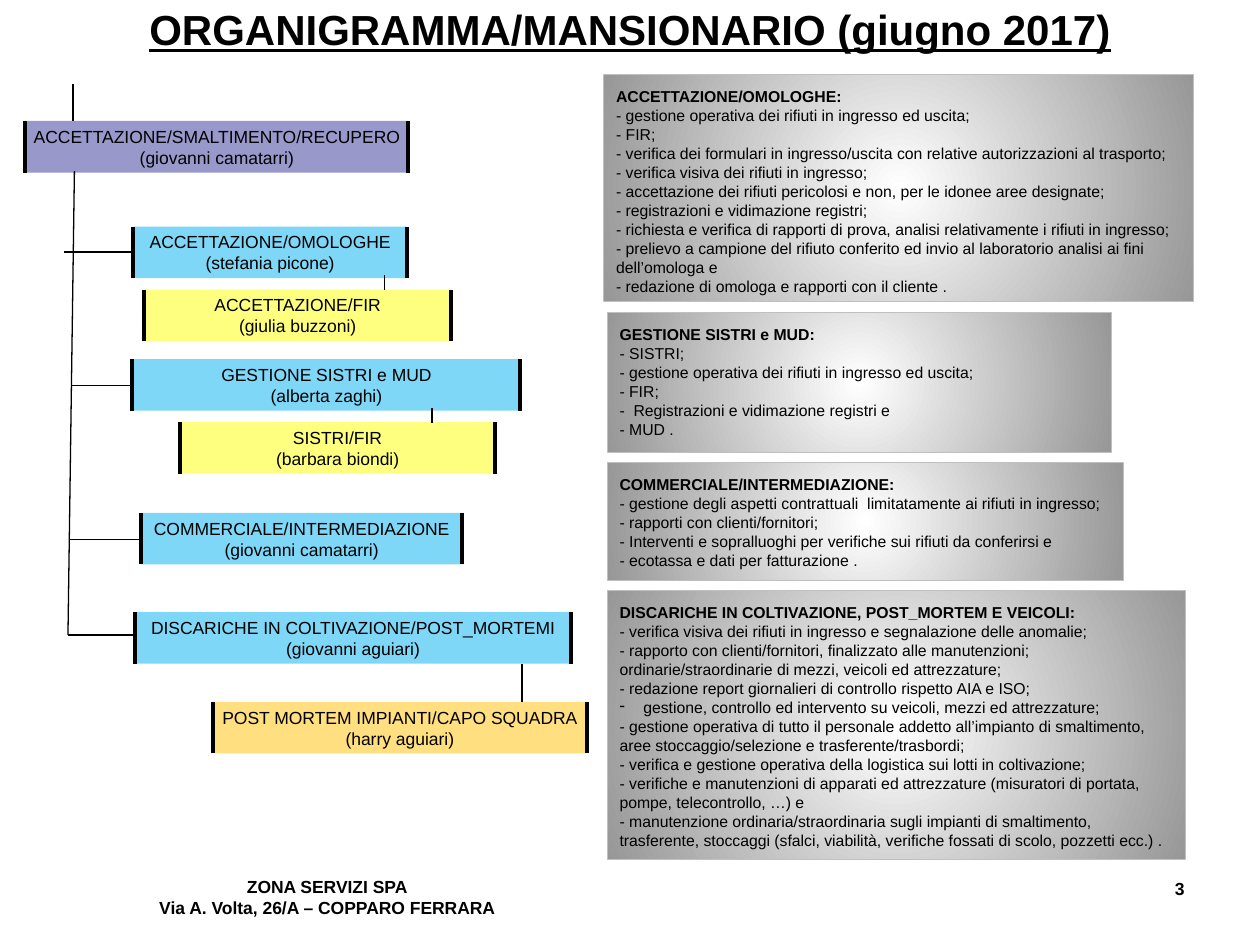
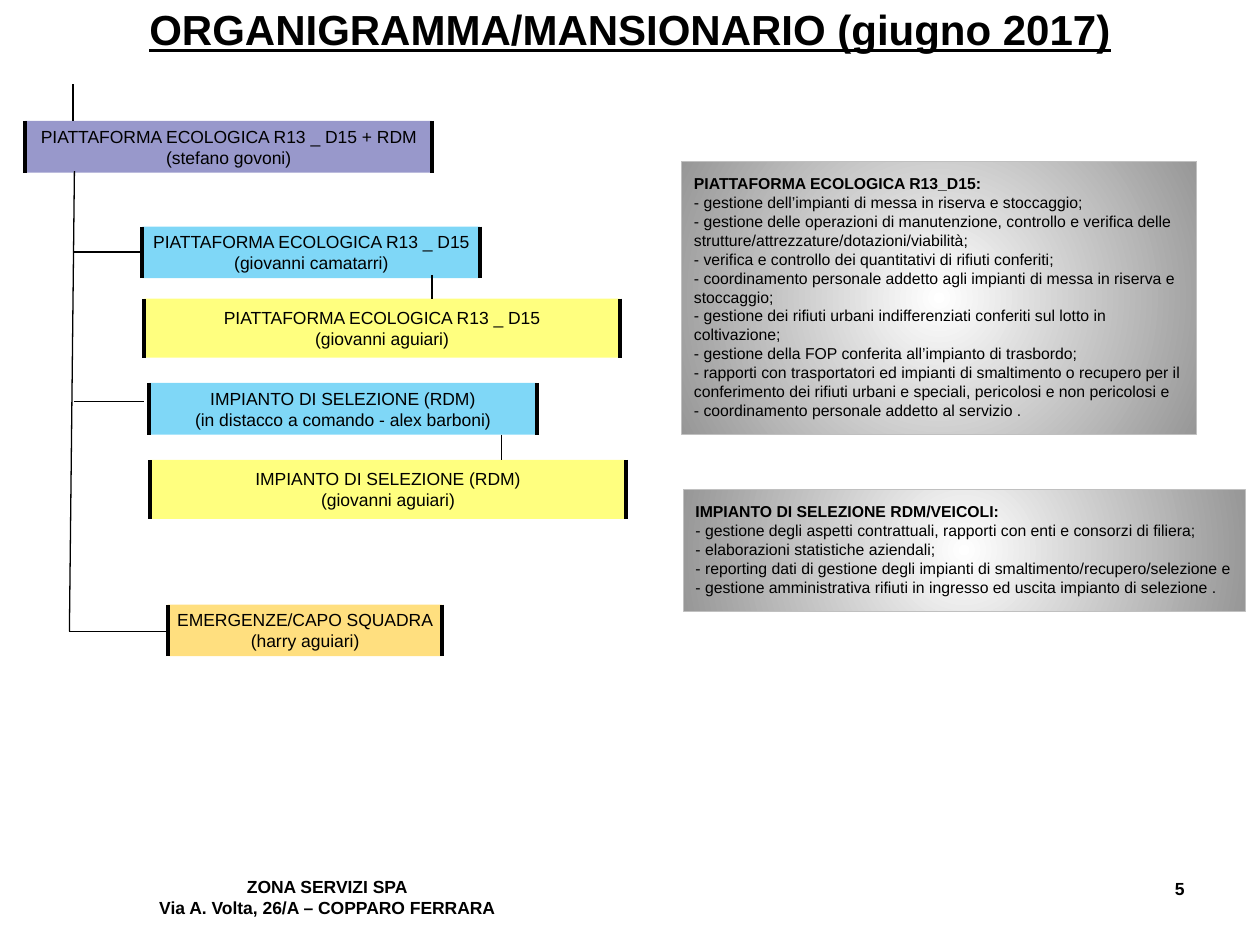
from dataclasses import dataclass

from lxml import etree
from pptx import Presentation
from pptx.dml.color import RGBColor as Rgb
from pptx.enum.shapes import MSO_CONNECTOR, MSO_SHAPE
from pptx.enum.text import MSO_ANCHOR as Anchor, PP_ALIGN as Align
from pptx.oxml import parse_xml
from pptx.oxml.ns import nsdecls, qn
from pptx.util import Cm, Pt


@dataclass(frozen=True)
class Theme:
    font: str = "Arial"
    ink: str = "000000"
    area: str = "333399"
    office: str = "00B0F0"
    staff: str = "FFFF00"
    foreman: str = "FFC000"
    panel_centre: str = "FFFFFF"
    panel_edge: str = "979797"
    panel_border: str = "C0C0C0"
    title_size: float = 24
    label_size: float = 10
    duty_size: float = 9


THEME = Theme()
TITLE = "ORGANIGRAMMA/MANSIONARIO (giugno 2017)"
FOOTER = ["ZONA SERVIZI SPA", "Via A. Volta, 26/A – COPPARO FERRARA"]
ROLE_HEIGHT, TALL_ROLE_HEIGHT = 1.04, 1.19


class OrgChart:
    def __init__(self, theme):
        self.theme = theme
        self.deck = Presentation()
        self.deck.slide_width, self.deck.slide_height = Cm(25.4), Cm(19.05)
        self.slide = None

    def new_slide(self, number):
        """Start a slide with the shared title, footer and page number."""
        theme = self.theme
        self.slide = self.deck.slides.add_slide(self.deck.slide_layouts[6])
        title = self.text_box([TITLE], (1.27, 0.76, 22.86, 0.46), theme.title_size, Align.CENTER)
        title.vertical_anchor = Anchor.BOTTOM
        title.paragraphs[0].font.underline = True
        self.text_box(FOOTER, (2.57, 17.53, 8.05, 1.09), theme.label_size, Align.CENTER)
        self.text_box([str(number)], (18.21, 17.58, 5.92, 1.09), theme.label_size, Align.RIGHT)

    def set_lines(self, frame, lines, size, align, bold=False):
        frame.text = "\n".join(lines)
        for paragraph in frame.paragraphs:
            paragraph.alignment = align
            font = paragraph.font
            font.name, font.size, font.bold = self.theme.font, Pt(size), bold
            font.color.rgb = Rgb.from_string(self.theme.ink)

    def text_box(self, lines, place, size, align):
        frame = self.slide.shapes.add_textbox(*map(Cm, place)).text_frame
        frame.word_wrap = True
        self.set_lines(frame, lines, size, align, bold=True)
        return frame

    def shape(self, preset, place, line_colour, line_width, insets):
        shape = self.slide.shapes.add_shape(preset, *map(Cm, place))
        shape.shadow.inherit = False
        shape.line.color.rgb = Rgb.from_string(line_colour)
        shape.line.width = Pt(line_width)
        frame = shape.text_frame
        frame.margin_left = frame.margin_right = Cm(insets[0])
        frame.margin_top = frame.margin_bottom = Cm(insets[1])
        return shape

    def role(self, colour, left, top, width, office, person, height=ROLE_HEIGHT):
        """Half-transparent box with side bars: an office and who holds it."""
        box = self.shape(MSO_SHAPE.DOUBLE_BRACKET, (left, top, width, height),
                         self.theme.ink, 2.25, (0.1, 0.05))
        box.adjustments[0] = 0
        box.fill.solid()
        box.fill.fore_color.rgb = Rgb.from_string(colour)
        tint = box._element.spPr.find(qn("a:solidFill")).find(qn("a:srgbClr"))
        etree.SubElement(tint, qn("a:alpha"), val="50000")
        box.text_frame.word_wrap = False
        box.text_frame.vertical_anchor = Anchor.MIDDLE
        self.set_lines(box.text_frame, [office, f"({person})"], self.theme.label_size, Align.CENTER)

    def duties(self, place, heading, tasks, hanging=None):
        """Grey panel listing tasks; the one equal to hanging gets a real bullet."""
        theme = self.theme
        panel = self.shape(MSO_SHAPE.RECTANGLE, place, theme.panel_border, 0.5, (0.25, 0.25))
        panel.fill.gradient()
        for stop, colour in zip(panel.fill.gradient_stops, (theme.panel_centre, theme.panel_edge)):
            stop.color.rgb = Rgb.from_string(colour)
        gradient = panel._element.spPr.find(qn("a:gradFill"))
        gradient.replace(gradient.find(qn("a:lin")), parse_xml(
            f'<a:path {nsdecls("a")} path="circle">'
            '<a:fillToRect l="50000" t="50000" r="50000" b="50000"/></a:path>'))
        frame = panel.text_frame
        frame.word_wrap = True
        frame.vertical_anchor = Anchor.TOP
        lines = [task if task == hanging else f"- {task}" for task in tasks]
        self.set_lines(frame, [heading, *lines], theme.duty_size, Align.LEFT)
        frame.paragraphs[0].font.bold = True
        if hanging:
            properties = frame.paragraphs[1 + tasks.index(hanging)]._p.get_or_add_pPr()
            properties.set("marL", str(Cm(0.48)))
            properties.set("indent", str(-Cm(0.48)))
            bullet = etree.Element(qn("a:buChar"), char="-")
            properties.find(qn("a:defRPr")).addprevious(bullet)

    def link(self, x1, y1, x2, y2):
        line = self.slide.shapes.add_connector(MSO_CONNECTOR.STRAIGHT, *map(Cm, (x1, y1, x2, y2)))
        line.line.color.rgb = Rgb.from_string(self.theme.ink)
        line.line.width = Pt(0.75)
        etree.SubElement(line._element.spPr, qn("a:effectLst"))

    def tree(self, spine_end, branches, drops):
        """Links: spine, branches (left, right, y) and drops (x, top, bottom)."""
        self.link(1.47, 1.7, 1.47, 2.44)
        self.link(1.5, 3.45, *spine_end)
        for left, right, y in branches:
            self.link(left, y, right, y)
        for x, top, bottom in drops:
            self.link(x, top, x, bottom)


def waste_acceptance(chart):
    chart.new_slide(3)
    chart.duties((12.17, 1.5, 11.89, 4.57), "ACCETTAZIONE/OMOLOGHE:", [
        "gestione operativa dei rifiuti in ingresso ed uscita;",
        "FIR;",
        "verifica dei formulari in ingresso/uscita con relative autorizzazioni al trasporto;",
        "verifica visiva dei rifiuti in ingresso;",
        "accettazione dei rifiuti pericolosi e non, per le idonee aree designate;",
        "registrazioni e vidimazione registri;",
        "richiesta e verifica di rapporti di prova, analisi relativamente i rifiuti in ingresso;",
        "prelievo a campione del rifiuto conferito ed invio al laboratorio analisi ai fini "
        "dell’omologa e",
        "redazione di omologa e rapporti con il cliente .",
    ])
    chart.duties((12.24, 6.3, 10.16, 2.82), "GESTIONE SISTRI e MUD:", [
        "SISTRI;",
        "gestione operativa dei rifiuti in ingresso ed uscita;",
        "FIR;",
        " Registrazioni e vidimazione registri e",
        "MUD .",
    ])
    chart.duties((12.24, 9.32, 10.41, 2.39), "COMMERCIALE/INTERMEDIAZIONE:", [
        "gestione degli aspetti contrattuali  limitatamente ai rifiuti in ingresso;",
        "rapporti con clienti/fornitori;",
        "Interventi e sopralluoghi per verifiche sui rifiuti da conferirsi e",
        "ecotassa e dati per fatturazione .",
    ])
    vehicle_care = "gestione, controllo ed intervento su veicoli, mezzi ed attrezzature;"
    chart.duties((12.24, 11.91, 11.66, 5.41), "DISCARICHE IN COLTIVAZIONE, POST_MORTEM E VEICOLI:", [
        "verifica visiva dei rifiuti in ingresso e segnalazione delle anomalie;",
        "rapporto con clienti/fornitori, finalizzato alle manutenzioni;  "
        "ordinarie/straordinarie di mezzi, veicoli ed attrezzature;",
        "redazione report giornalieri di controllo rispetto AIA e ISO;",
        vehicle_care,
        "gestione operativa di tutto il personale addetto all’impianto di smaltimento, "
        "aree stoccaggio/selezione e trasferente/trasbordi;",
        "verifica e gestione operativa della logistica sui lotti in coltivazione;",
        "verifiche e manutenzioni di apparati ed attrezzature (misuratori di portata, "
        "pompe, telecontrollo, …) e",
        "manutenzione ordinaria/straordinaria sugli impianti di smaltimento, trasferente, "
        "stoccaggi (sfalci, viabilità, verifiche fossati di scolo, pozzetti ecc.) .",
    ], hanging=vehicle_care)

    theme = chart.theme
    for role in (
        (theme.area, 0.51, 2.44, 7.72, "ACCETTAZIONE/SMALTIMENTO/RECUPERO", "giovanni camatarri"),
        (theme.office, 2.69, 4.57, 5.51, "ACCETTAZIONE/OMOLOGHE", "stefania picone"),
        (theme.staff, 2.9, 5.84, 6.2, "ACCETTAZIONE/FIR", "giulia buzzoni"),
        (theme.office, 2.67, 7.24, 7.82, "GESTIONE SISTRI e MUD", "alberta zaghi"),
        (theme.staff, 3.63, 8.51, 6.35, "SISTRI/FIR", "barbara biondi"),
        (theme.office, 2.84, 10.34, 6.48, "COMMERCIALE/INTERMEDIAZIONE", "giovanni camatarri"),
        (theme.office, 2.72, 12.34, 8.79, "DISCARICHE IN COLTIVAZIONE/POST_MORTEMI",
         "giovanni aguiari"),
        (theme.foreman, 4.29, 14.15, 7.54, "POST MORTEM IMPIANTI/CAPO SQUADRA", "harry aguiari"),
    ):
        chart.role(*role)
    chart.tree(
        spine_end=(1.37, 12.8),
        branches=[(1.3, 2.69, 5.08), (1.45, 2.62, 7.77), (1.42, 2.84, 10.87), (1.37, 2.69, 12.8)],
        drops=[(7.75, 5.54, 5.84), (8.71, 8.23, 8.53), (10.52, 13.39, 14.15)],
    )


def ecological_platform(chart):
    chart.new_slide(5)
    chart.duties((13.74, 3.25, 10.39, 5.51), "PIATTAFORMA ECOLOGICA R13_D15:", [
        "gestione dell’impianti di messa in riserva e stoccaggio;",
        "gestione delle operazioni di manutenzione, controllo e verifica delle "
        "strutture/attrezzature/dotazioni/viabilità;",
        "verifica e controllo dei quantitativi di rifiuti conferiti;",
        "coordinamento personale addetto agli impianti di messa in riserva e stoccaggio;",
        "gestione dei rifiuti urbani indifferenziati conferiti sul lotto in coltivazione;",
        "gestione della FOP conferita all’impianto di trasbordo;",
        "rapporti con trasportatori ed impianti di smaltimento o recupero per il "
        "conferimento dei rifiuti urbani e speciali, pericolosi e non pericolosi e",
        "coordinamento personale addetto al servizio .",
    ])
    chart.duties((13.77, 9.86, 11.33, 2.46), "IMPIANTO DI SELEZIONE RDM/VEICOLI:", [
        "gestione degli aspetti contrattuali, rapporti con enti e consorzi di filiera;",
        "elaborazioni statistiche aziendali;",
        "reporting dati di gestione degli impianti di smaltimento/recupero/selezione e",
        "gestione amministrativa rifiuti in ingresso ed uscita impianto di selezione .",
    ])

    theme = chart.theme
    platform, sorting = "PIATTAFORMA ECOLOGICA R13 _ D15", "IMPIANTO DI SELEZIONE (RDM)"
    for role in (
        (theme.area, 0.51, 2.44, 8.2, f"{platform} + RDM", "stefano govoni"),
        (theme.office, 2.87, 4.57, 6.81, platform, "giovanni camatarri"),
        (theme.staff, 2.9, 6.02, 9.6, platform, "giovanni aguiari", TALL_ROLE_HEIGHT),
        (theme.office, 3, 7.72, 7.82, sorting, "in distacco a comando - alex barboni"),
        (theme.staff, 3.02, 9.27, 9.6, sorting, "giovanni aguiari", TALL_ROLE_HEIGHT),
        (theme.foreman, 3.38, 12.19, 5.54, "EMERGENZE/CAPO SQUADRA", "harry aguiari"),
    ):
        chart.role(*role)
    chart.tree(
        spine_end=(1.4, 12.73),
        branches=[(1.47, 2.87, 5.08), (1.5, 2.9, 8.1), (1.4, 3.35, 12.73)],
        drops=[(8.71, 5.54, 6.02), (10.11, 8.76, 9.27)],
    )


def main():
    chart = OrgChart(THEME)
    waste_acceptance(chart)
    ecological_platform(chart)
    chart.deck.save("out.pptx")


if __name__ == "__main__":
    main()
